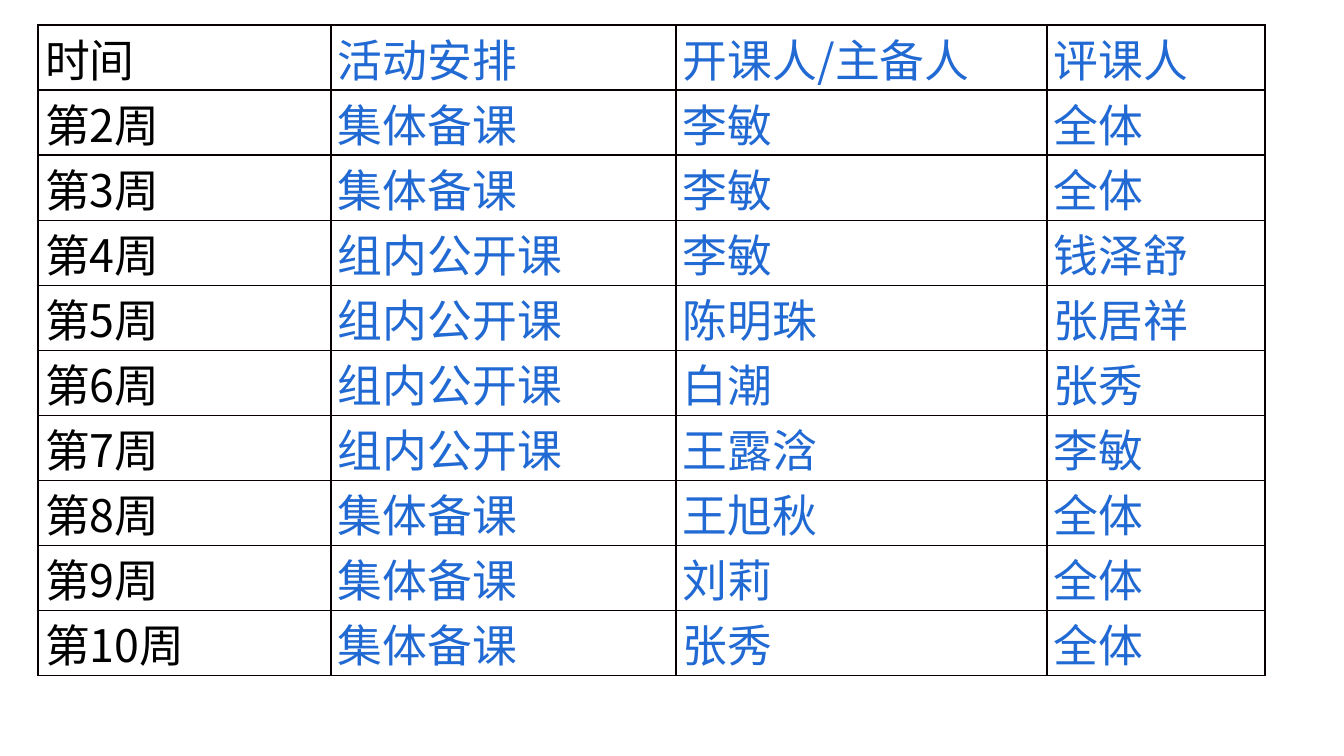
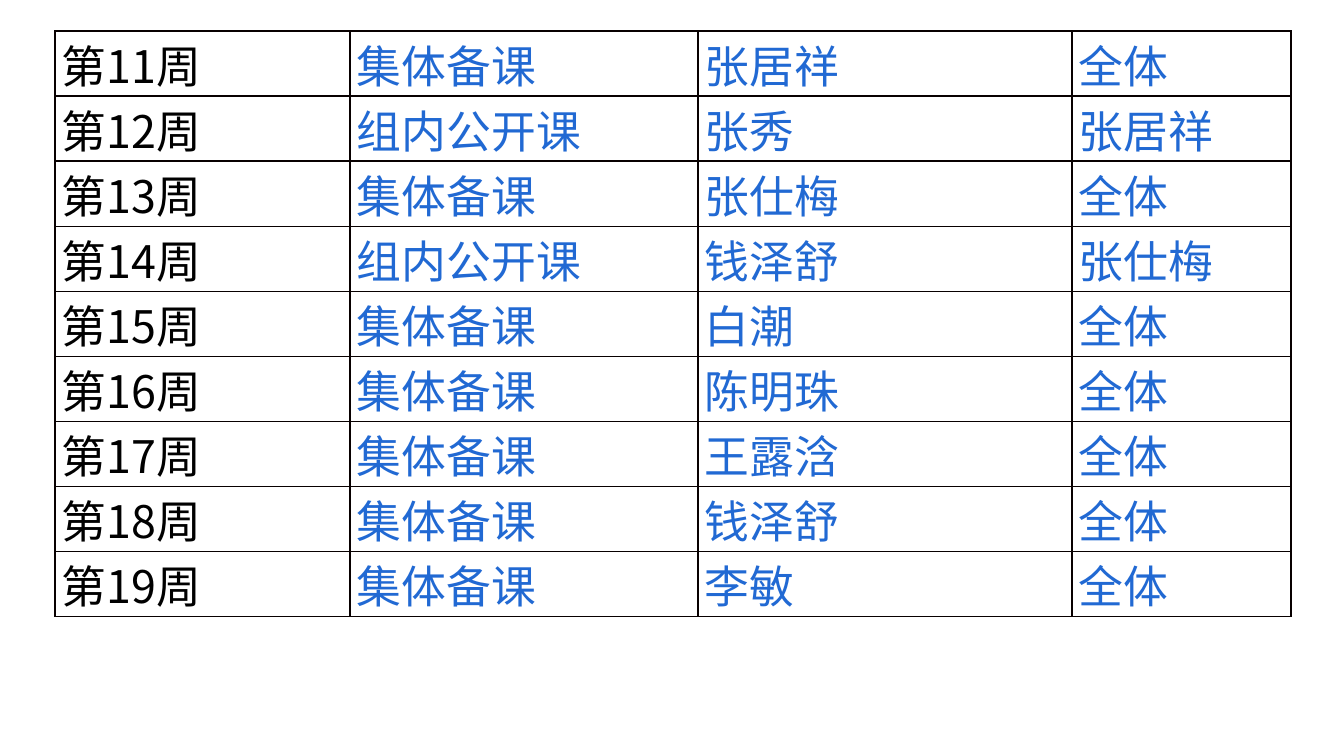
import pptx
import pptx.util
import pptx.dml.color
import pptx.oxml
import pptx.oxml.ns
import lxml.etree

RGBColor = pptx.dml.color.RGBColor
BLACK = RGBColor(0x00, 0x00, 0x00)
BLUE = RGBColor(0x21, 0x69, 0xD3)
BORDER = RGBColor(0x08, 0x00, 0x00)
FONT = "Noto Sans CJK SC"
FONT_SIZE = pptx.util.Pt(32)
BORDER_WIDTH = pptx.util.Pt(1)
PX_PER_INCH = 100.8
SLIDE_SIZE = (1344, 756)
ROW_HEIGHT = 65
INSET = 7

SCHEDULES = [
    {
        "left": 38,
        "top": 25,
        "columns": [293, 345, 371, 218],
        "rows": [
            ("时间", "活动安排", "开课人/主备人", "评课人"),
            ("第2周", "集体备课", "李敏", "全体"),
            ("第3周", "集体备课", "李敏", "全体"),
            ("第4周", "组内公开课", "李敏", "钱泽舒"),
            ("第5周", "组内公开课", "陈明珠", "张居祥"),
            ("第6周", "组内公开课", "白潮", "张秀"),
            ("第7周", "组内公开课", "王露浛", "李敏"),
            ("第8周", "集体备课", "王旭秋", "全体"),
            ("第9周", "集体备课", "刘莉", "全体"),
            ("第10周", "集体备课", "张秀", "全体"),
        ],
    },
    {
        "left": 55,
        "top": 31,
        "columns": [295, 348, 374, 219],
        "rows": [
            ("第11周", "集体备课", "张居祥", "全体"),
            ("第12周", "组内公开课", "张秀", "张居祥"),
            ("第13周", "集体备课", "张仕梅", "全体"),
            ("第14周", "组内公开课", "钱泽舒", "张仕梅"),
            ("第15周", "集体备课", "白潮", "全体"),
            ("第16周", "集体备课", "陈明珠", "全体"),
            ("第17周", "集体备课", "王露浛", "全体"),
            ("第18周", "集体备课", "钱泽舒", "全体"),
            ("第19周", "集体备课", "李敏", "全体"),
        ],
    },
]


def px(n):
    return pptx.util.Inches(n / PX_PER_INCH)


def add_borders(cell):
    qn = pptx.oxml.ns.qn
    tcPr = cell._tc.get_or_add_tcPr()
    for i, side in enumerate(("a:lnL", "a:lnR", "a:lnT", "a:lnB")):
        ln = lxml.etree.Element(qn(side), w=str(BORDER_WIDTH))
        fill = lxml.etree.SubElement(ln, qn("a:solidFill"))
        lxml.etree.SubElement(fill, qn("a:srgbClr"), val=str(BORDER))
        tcPr.insert(i, ln)


def fill_cell(cell, text, color):
    cell.margin_left = cell.margin_right = px(INSET)
    cell.margin_top = cell.margin_bottom = 0
    cell.fill.background()
    add_borders(cell)
    r = cell.text_frame.paragraphs[0].add_run()
    r.text = text
    r.font.size = FONT_SIZE
    r.font.color.rgb = color
    r.font.name = FONT
    rPr = r.font._element
    lxml.etree.SubElement(rPr, pptx.oxml.ns.qn("a:ea"), typeface=FONT)


def add_schedule(s, schedule):
    rows, columns = schedule["rows"], schedule["columns"]
    table = s.shapes.add_table(
        len(rows), len(columns),
        px(schedule["left"]), px(schedule["top"]),
        px(sum(columns)), px(ROW_HEIGHT * len(rows)),
    ).table
    table.first_row = table.horz_banding = False
    for column, width in zip(table.columns, columns):
        column.width = px(width)
    for row, texts in zip(table.rows, rows):
        row.height = px(ROW_HEIGHT)
        for i, (cell, text) in enumerate(zip(row.cells, texts)):
            fill_cell(cell, text, BLUE if i else BLACK)


def main():
    prs = pptx.Presentation()
    prs.slide_width, prs.slide_height = map(px, SLIDE_SIZE)
    blank = prs.slide_layouts[6]
    for schedule in SCHEDULES:
        add_schedule(prs.slides.add_slide(blank), schedule)
    prs.save("out.pptx")


if __name__ == "__main__":
    main()
